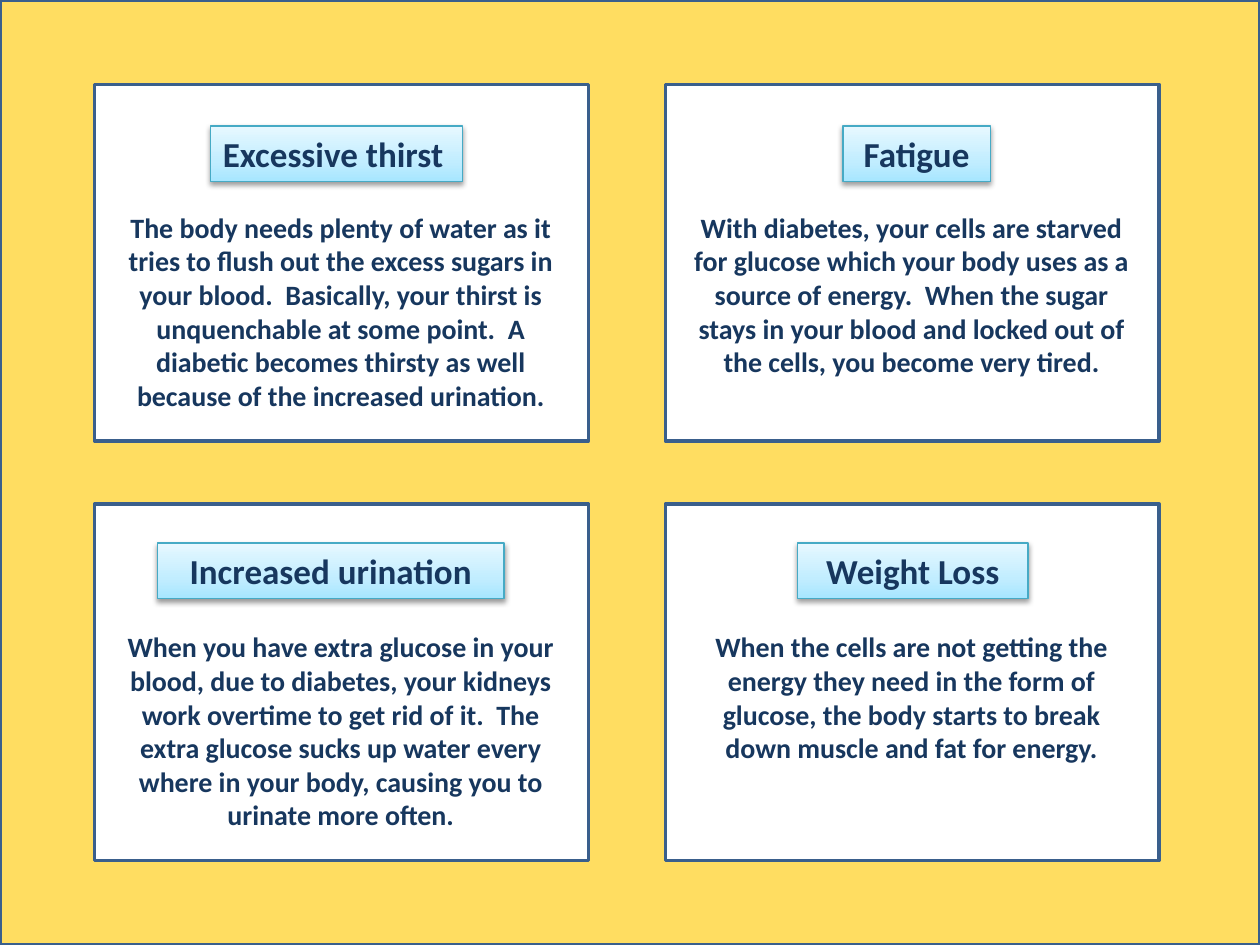
from dataclasses import dataclass

from lxml import etree
from pptx import Presentation
from pptx.dml.color import RGBColor
from pptx.enum.shapes import MSO_SHAPE
from pptx.enum.text import MSO_ANCHOR, PP_ALIGN
from pptx.oxml import parse_xml
from pptx.oxml.ns import nsdecls, qn
from pptx.util import Inches, Pt

YELLOW = RGBColor(0xFF, 0xDD, 0x61)
WHITE = RGBColor(0xFF, 0xFF, 0xFF)
BORDER = RGBColor(0x3A, 0x5F, 0x8C)
NAVY = RGBColor(0x17, 0x37, 0x5E)
TEAL = RGBColor(0x46, 0xAA, 0xC5)
GLOW = [(0, RGBColor(0xA7, 0xE6, 0xFF)),
        (35, RGBColor(0xC1, 0xED, 0xFF)),
        (100, RGBColor(0xE7, 0xF8, 0xFF))]

SLIDE_W, SLIDE_H = 10, 7.5
CARD_W, CARD_H = 3.92, 2.83
COL_X = (0.75, 5.28)
ROW_Y = (0.67, 4)
TITLE_Y = (1, 4.31)
TITLE_H = 0.44
BODY_DX, BODY_DY, BODY_W = 0.08, 0.95, 3.75


@dataclass
class Symptom:
    col: int
    row: int
    title: str
    title_x: float
    title_w: float
    body: str
    body_h: float
    title_align: PP_ALIGN = PP_ALIGN.CENTER


SYMPTOMS = [
    Symptom(0, 0, "Excessive thirst", 1.67, 2,
            "The body needs plenty of water as it tries to flush out the excess "
            "sugars in your blood.  Basically, your thirst is unquenchable at "
            "some point.  A diabetic becomes thirsty as well because of the "
            "increased urination.", 1.72, PP_ALIGN.LEFT),
    Symptom(0, 1, "Increased urination", 1.25, 2.75,
            "When you have extra glucose in your blood, due to diabetes, your "
            "kidneys work overtime to get rid of it.  The extra glucose sucks "
            "up water every where in your body, causing you to urinate more "
            "often.", 1.72),
    Symptom(1, 0, "Fatigue", 6.69, 1.17,
            "With diabetes, your cells are starved for glucose which your body "
            "uses as a source of energy.  When the sugar stays in your blood "
            "and locked out of the cells, you become very tired.", 1.45),
    Symptom(1, 1, "Weight Loss", 6.33, 1.83,
            "When the cells are not getting the energy they need in the form of "
            "glucose, the body starts to break down muscle and fat for energy.",
            1.18),
]


def add_rect(s, x: float, y: float, w: float, h: float,
             line: RGBColor, width: float, fill: RGBColor | None = None):
    sp = s.shapes.add_shape(MSO_SHAPE.RECTANGLE, Inches(x), Inches(y),
                            Inches(w), Inches(h))
    sp.shadow.inherit = False
    sp.line.color.rgb = line
    sp.line.width = Pt(width)
    if fill is not None:
        sp.fill.solid()
        sp.fill.fore_color.rgb = fill
    return sp


def set_text(sp, text: str, *, size: float, align=PP_ALIGN.CENTER,
             anchor=MSO_ANCHOR.TOP, wrap: bool = True) -> None:
    tf = sp.text_frame
    tf.word_wrap = wrap
    tf.vertical_anchor = anchor
    p = tf.paragraphs[0]
    p.alignment = align
    r = p.add_run()
    r.text = text
    r.font.name = "Calibri"
    r.font.size = Pt(size)
    r.font.bold = True
    r.font.color.rgb = NAVY


def add_glow(sp) -> None:
    """Give a shape the three-stop gradient and a soft shadow below."""
    sp.fill.gradient()
    sp.fill.gradient_angle = 90
    stops = sp._element.spPr.find(".//" + qn("a:gsLst"))
    for old in list(stops):
        stops.remove(old)
    for pos, color in GLOW:
        gs = etree.SubElement(stops, qn("a:gs"), pos=str(pos * 1000))
        etree.SubElement(gs, qn("a:srgbClr"), val=str(color))
    effects = sp._element.spPr.find(qn("a:effectLst"))
    effects.append(parse_xml(
        f'<a:outerShdw {nsdecls("a")} blurRad="{Pt(3.1)}" dist="{Pt(1.6)}" '
        'dir="5400000" rotWithShape="0"><a:srgbClr val="000000">'
        '<a:alpha val="38000"/></a:srgbClr></a:outerShdw>'))


def add_symptom(s, item: Symptom) -> None:
    x, y = COL_X[item.col], ROW_Y[item.row]
    # Card
    add_rect(s, x, y, CARD_W, CARD_H, BORDER, 2, WHITE)
    # Title label
    label = add_rect(s, item.title_x, TITLE_Y[item.row], item.title_w, TITLE_H,
                     TEAL, 0.75)
    add_glow(label)
    set_text(label, item.title, size=20, align=item.title_align)
    # Explanation
    box = s.shapes.add_textbox(Inches(x + BODY_DX), Inches(y + BODY_DY),
                               Inches(BODY_W), Inches(item.body_h))
    set_text(box, item.body, size=16)


def main() -> None:
    prs = Presentation()
    prs.slide_width, prs.slide_height = Inches(SLIDE_W), Inches(SLIDE_H)
    s = prs.slides.add_slide(prs.slide_layouts[6])
    # Yellow backdrop
    add_rect(s, 0, 0, SLIDE_W, SLIDE_H, BORDER, 2, YELLOW)
    # Four symptom cards
    for item in SYMPTOMS:
        add_symptom(s, item)
    prs.save("out.pptx")


if __name__ == "__main__":
    main()
